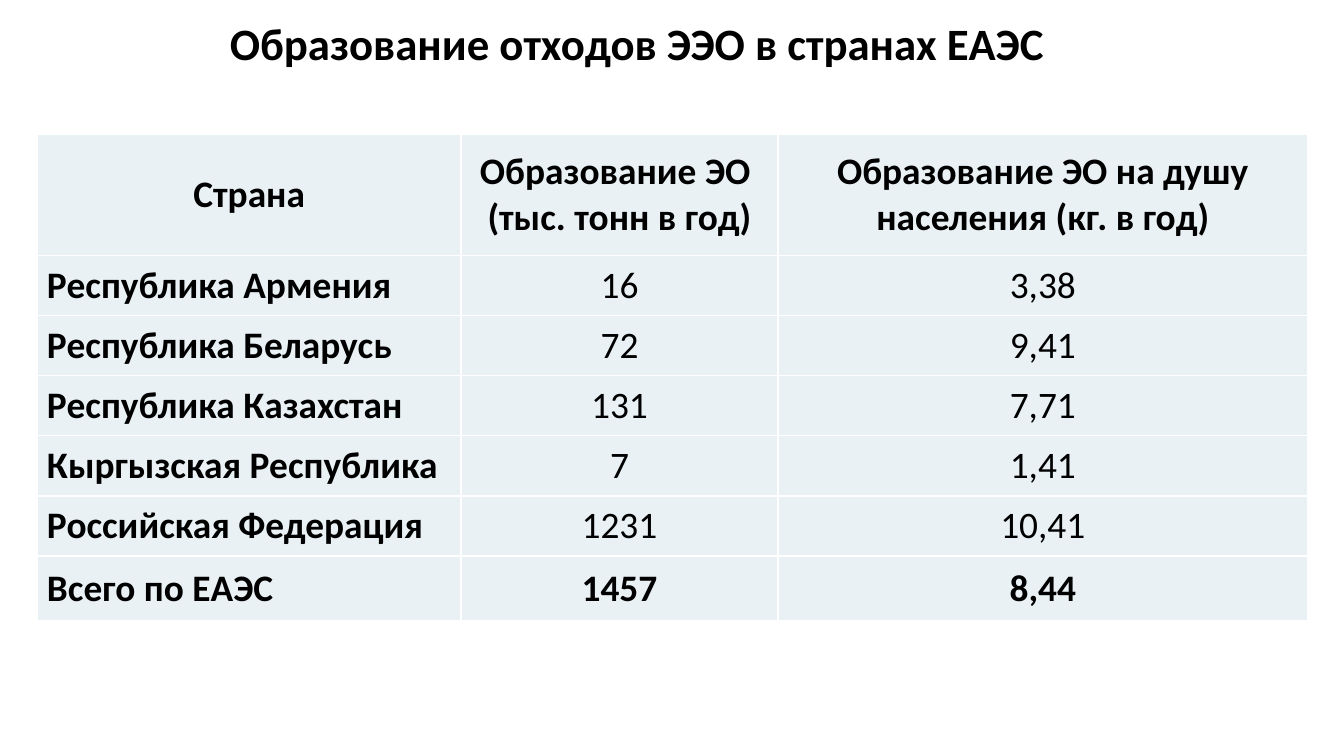
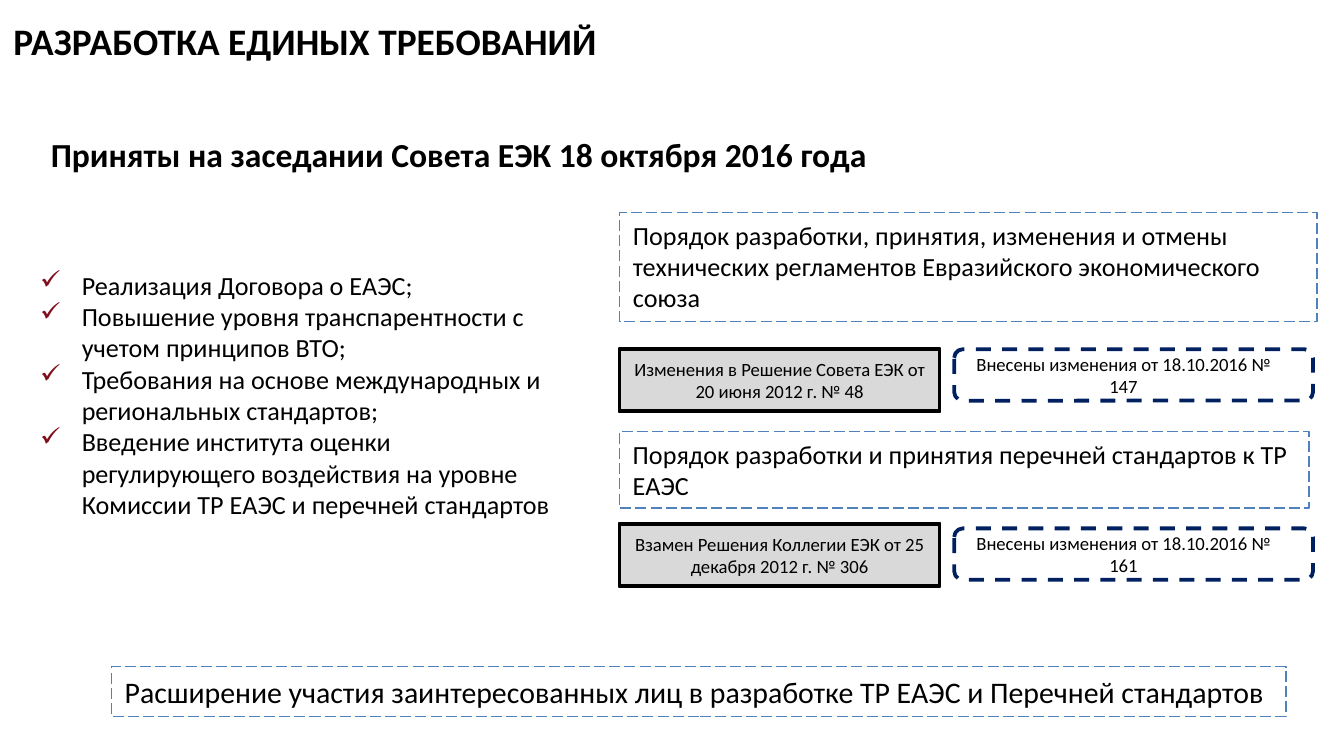
from lxml.etree import SubElement
from pptx import Presentation
from pptx.dml.color import RGBColor
from pptx.enum.dml import MSO_LINE
from pptx.enum.shapes import MSO_SHAPE
from pptx.enum.text import MSO_ANCHOR, MSO_AUTO_SIZE, PP_ALIGN
from pptx.oxml.ns import qn
from pptx.util import Inches, Pt

# Shared look
WIDTH = Inches(10)
HEIGHT = WIDTH * 9 // 16
FONT = "Calibri"
BLACK, WHITE = "000000", "FFFFFF"
CELL_FILL, GREY_FILL = "E9F1F5", "D9D9D9"
FRAME_BLUE, NAVY, CHECK_RED = "4F81BD", "002060", "7E0E19"

WASTE_ROWS = [
    ("Страна", "Образование ЭО \n(тыс. тонн в год)",
     "Образование ЭО на душу населения (кг. в год)"),
    ("Республика Армения", "16", "3,38"),
    ("Республика Беларусь", "72", "9,41"),
    ("Республика Казахстан", "131", "7,71"),
    ("Кыргызская Республика", "7", "1,41"),
    ("Российская Федерация", "1231", "10,41"),
    ("Всего по ЕАЭС", "1457", "8,44"),
]
GOALS = [
    "Реализация Договора о ЕАЭС;",
    "Повышение уровня транспарентности с учетом принципов ВТО;",
    "Требования на основе международных и региональных стандартов;",
    "Введение института оценки регулирующего воздействия на уровне "
    "Комиссии ТР ЕАЭС и перечней стандартов",
]


def color(hex_value):
    return RGBColor.from_string(hex_value)


def across(share):
    return round(WIDTH * share / 100)


def down(share):
    return round(HEIGHT * share / 100)


def area(left, top, width, height):
    """Turn percentages of the slide into a position and a size."""
    return across(left), down(top), across(width), down(height)


def write(frame, text, size, bold=False, align=PP_ALIGN.LEFT, anchor=MSO_ANCHOR.TOP):
    frame.text = text
    frame.vertical_anchor = anchor
    for paragraph in frame.paragraphs:
        paragraph.alignment = align
        for run in paragraph.runs:
            run.font.name, run.font.size, run.font.bold = FONT, Pt(size), bold
            run.font.color.rgb = color(BLACK)


def add_titled_slide(deck, title, size, box):
    slide = deck.slides.add_slide(deck.slide_layouts[5])
    heading = slide.shapes.title
    heading.left, heading.top, heading.width, heading.height = area(*box)
    heading.text_frame.word_wrap = True
    heading.text_frame.auto_size = MSO_AUTO_SIZE.NONE
    write(heading.text_frame, title, size, bold=True, anchor=MSO_ANCHOR.MIDDLE)
    return slide


def add_text(slide, box, text, size, bold=False):
    frame = slide.shapes.add_textbox(*area(*box)).text_frame
    frame.word_wrap = True
    write(frame, text, size, bold)
    return frame


def add_box(slide, kind, box, text, size, line, line_width, dash=None, fill=None,
            align=PP_ALIGN.CENTER, anchor=MSO_ANCHOR.MIDDLE):
    shape = slide.shapes.add_shape(kind, *area(*box))
    shape.shadow.inherit = False
    if fill:
        shape.fill.solid()
        shape.fill.fore_color.rgb = color(fill)
    else:
        shape.fill.background()
    shape.line.color.rgb = color(line)
    shape.line.width = Pt(line_width)
    if dash:
        shape.line.dash_style = dash
    shape.text_frame.word_wrap = True
    write(shape.text_frame, text, size, align=align, anchor=anchor)
    return shape


def add_framed_note(slide, box, text, size):
    add_box(slide, MSO_SHAPE.RECTANGLE, box, text, size, FRAME_BLUE, 0.75,
            MSO_LINE.LONG_DASH, align=PP_ALIGN.LEFT, anchor=MSO_ANCHOR.TOP)


def add_decision(slide, top, text):
    plate = add_box(slide, MSO_SHAPE.BEVEL, (46.1, top, 23.8, 8.2), text, 10,
                    BLACK, 2, fill=GREY_FILL)
    plate.adjustments[0] = 0


def add_amendment(slide, top, number):
    badge = add_box(slide, MSO_SHAPE.ROUNDED_RECTANGLE, (71, top, 26.7, 6.8),
                    f"Внесены изменения от 18.10.2016 № {number}", 10,
                    NAVY, 2, MSO_LINE.DASH, WHITE)
    # The wider right margin puts the number on its own line
    badge.text_frame.margin_right = Inches(0.25)


def add_checks(frame):
    for paragraph in frame.paragraphs:
        props = paragraph._p.get_or_add_pPr()
        props.set("marL", str(Inches(0.31)))
        props.set("indent", str(-Inches(0.31)))
        tint = SubElement(props, qn("a:buClr"))
        SubElement(tint, qn("a:srgbClr"), val=CHECK_RED)
        SubElement(props, qn("a:buChar"), char="✓")


def style_cell(cell):
    props = cell._tc.get_or_add_tcPr()
    for side in ("lnL", "lnR", "lnT", "lnB"):
        border = SubElement(props, qn(f"a:{side}"), w=str(Pt(1)))
        SubElement(SubElement(border, qn("a:solidFill")), qn("a:srgbClr"), val=WHITE)
    cell.fill.solid()
    cell.fill.fore_color.rgb = color(CELL_FILL)
    cell.margin_left = cell.margin_right = Inches(0.07)
    cell.margin_top = cell.margin_bottom = 0


def add_waste_table(slide, box, column_shares, row_shares):
    table = slide.shapes.add_table(len(row_shares), len(column_shares),
                                   *area(*box)).table
    for column, share in zip(table.columns, column_shares):
        column.width = across(share)
    for row, share in zip(table.rows, row_shares):
        row.height = down(share)
    last = len(WASTE_ROWS) - 1
    for r, values in enumerate(WASTE_ROWS):
        for c, value in enumerate(values):
            cell = table.cell(r, c)
            style_cell(cell)
            country = c == 0 and r > 0
            write(cell.text_frame, value, 20, bold=c == 0 or r in (0, last),
                  align=PP_ALIGN.LEFT if country else PP_ALIGN.CENTER)
            cell.vertical_anchor = MSO_ANCHOR.MIDDLE


def build_waste_slide(deck):
    slide = add_titled_slide(deck, "Образование отходов ЭЭО в странах ЕАЭС", 24,
                             (16.1, 0, 65, 11.2))
    add_waste_table(slide, (2.8, 17.8, 94.5, 64.4), (31.5, 23.6, 39.4),
                    [16] + [7.95] * 5 + [8.65])


def build_requirements_slide(deck):
    slide = add_titled_slide(deck, "РАЗРАБОТКА ЕДИНЫХ ТРЕБОВАНИЙ", 20,
                             (0, 0, 81.5, 10.8))
    add_text(slide, (2.8, 16.9, 76.4, 7.1),
             "Приняты на заседании Совета ЕЭК 18 октября 2016 года", 18, bold=True)

    # Goals on the left
    add_checks(add_text(slide, (2, 34.7, 40.8, 35.4), "\n".join(GOALS), 14))

    # Procedures with the decisions they change
    add_framed_note(slide, (46.1, 28.1, 51.9, 14.4),
                    "Порядок разработки, принятия, изменения и отмены технических "
                    "регламентов Евразийского экономического союза", 14)
    add_decision(slide, 46.2, "Изменения в Решение Совета ЕЭК от 20 июня 2012 г. № 48")
    add_amendment(slide, 46.2, 147)
    add_framed_note(slide, (46.1, 57.1, 51.3, 10.1),
                    "Порядок разработки и принятия перечней стандартов к ТР ЕАЭС", 14)
    add_decision(slide, 69.3, "Взамен Решения Коллегии ЕЭК от 25 декабря 2012 г. № 306")
    add_amendment(slide, 69.9, 161)

    # Conclusion
    add_framed_note(slide, (8.3, 88.2, 87.4, 6.6),
                    "Расширение участия заинтересованных лиц в разработке "
                    "ТР ЕАЭС и Перечней стандартов", 16)


def main():
    deck = Presentation()
    deck.slide_width, deck.slide_height = WIDTH, HEIGHT
    build_waste_slide(deck)
    build_requirements_slide(deck)
    deck.save("out.pptx")


if __name__ == "__main__":
    main()
